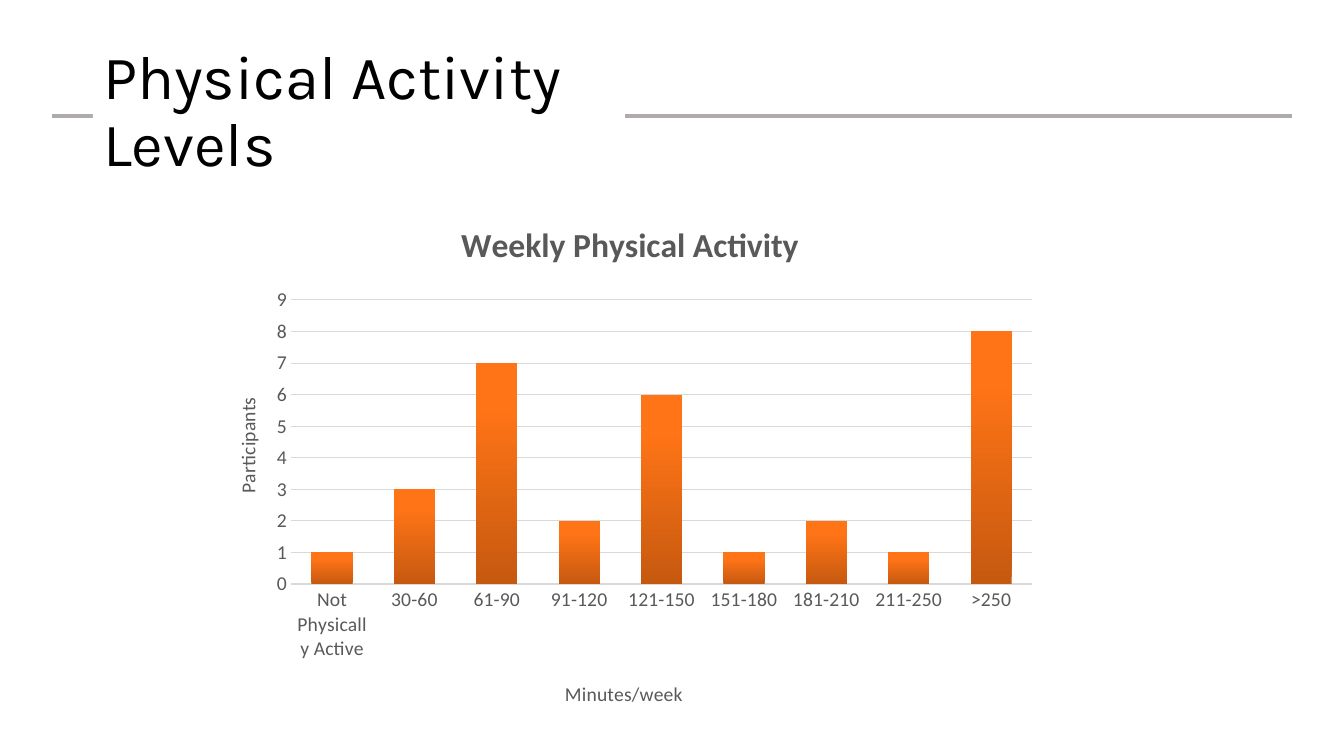
import copy
from dataclasses import dataclass

import pptx
import pptx.chart.data
import pptx.dml.color
import pptx.enum.chart
import pptx.enum.shapes
import pptx.enum.text
import pptx.oxml
import pptx.oxml.ns
import pptx.util
from lxml import etree

HEAD = "Physical Activity Levels"
NAMES = ("Weekly Physical Activity", "Minutes/week", "Participants")
COUNTS = {
    "Not Physically Active": 1, "30-60": 3, "61-90": 7, "91-120": 2,
    "121-150": 6, "151-180": 1, "181-210": 2, "211-250": 1, ">250": 8,
}

# Boxes in px: left, top, width, height
SIZE = (1344, 756)
HEAD_BOX = (93, 40, 532, 146)
RULE = (52, 116, 1292, 116)
CHART_BOX = (180, 186, 887, 606)

# Parts of the chart area
PLOT = {"x": 0.125, "y": 0.188, "w": 0.836, "h": 0.469}
SPOTS = ({"x": 0.31, "y": 0.05}, {"x": 0.43, "y": 0.81}, {"x": 0.057, "y": 0.343})


@dataclass(frozen=True)
class Theme:
    paper: str = "FFFFFF"
    ink: str = "000000"
    grey: str = "595959"
    grid: str = "D9D9D9"
    rule: str = "AFABAB"
    stops: tuple = ((0, "C65910"), (0.8, "FF7416"), (1, "FF7517"))
    head_font: str = "Karla"
    font: str = "Calibri"
    head: int = 44
    title: int = 24
    text: int = 14


THEME = Theme()
qn = pptx.oxml.ns.qn


def emu(*px):
    return [round(n * 914400 / 100.8) for n in px]


def rgb(code):
    return pptx.dml.color.RGBColor.from_string(code)


def style(font, name, size, color, bold=False):
    font.name, font.size, font.bold = name, pptx.util.Pt(size), bold
    font.color.rgb = rgb(color)


def stroke(line, color, width):
    line.color.rgb = rgb(color)
    line.width = pptx.util.Pt(width)


def place(parent, spot, index):
    """Give a chart part a fixed layout, as shares of the chart area."""
    for old in parent.findall(qn("c:layout")):
        parent.remove(old)
    layout = pptx.oxml.parse_xml(f"<c:layout {pptx.oxml.ns.nsdecls('c')}/>")
    manual = etree.SubElement(layout, qn("c:manualLayout"))
    if "w" in spot:
        etree.SubElement(manual, qn("c:layoutTarget")).set("val", "inner")
    for key in ("x", "y"):
        etree.SubElement(manual, qn(f"c:{key}Mode")).set("val", "edge")
    for key, share in spot.items():
        etree.SubElement(manual, qn(f"c:{key}")).set("val", str(share))
    parent.insert(index, layout)


def add_head(slide):
    title = slide.shapes.title
    title.left, title.top, title.width, title.height = emu(*HEAD_BOX)
    title.fill.solid()
    title.fill.fore_color.rgb = rgb(THEME.paper)
    frame = title.text_frame
    frame.text = HEAD
    frame.word_wrap = True
    frame.auto_size = pptx.enum.text.MSO_AUTO_SIZE.NONE
    frame.vertical_anchor = pptx.enum.text.MSO_ANCHOR.MIDDLE
    para = frame.paragraphs[0]
    para.alignment = pptx.enum.text.PP_ALIGN.LEFT
    para.line_spacing = 0.9
    style(para.runs[0].font, THEME.head_font, THEME.head, THEME.ink)

    rule = slide.shapes.add_connector(
        pptx.enum.shapes.MSO_CONNECTOR.STRAIGHT, *emu(*RULE))
    stroke(rule.line, THEME.rule, 3)
    etree.SubElement(rule.element.spPr, qn("a:effectLst"))
    title.element.addprevious(rule.element)  # the title box hides part of the rule


def fill_bars(chart):
    plot = chart.plots[0]
    plot.gap_width, plot.overlap, plot.vary_by_categories = 100, -24, False
    bars = plot.series[0].format
    bars.line.fill.background()
    bars.fill.gradient()
    bars.fill.gradient_angle = 90
    last = chart.element.xpath(".//c:ser//a:gs")[-1]
    last.addnext(copy.deepcopy(last))
    for stop, (share, color) in zip(bars.fill.gradient_stops, THEME.stops):
        stop.position = share
        stop.color.rgb = rgb(color)


def add_chart(slide):
    kinds = pptx.enum.chart
    data = pptx.chart.data.CategoryChartData(number_format="###0")
    data.categories = list(COUNTS)
    data.add_series("Series 1", COUNTS.values())
    chart = slide.shapes.add_chart(
        kinds.XL_CHART_TYPE.COLUMN_CLUSTERED, *emu(*CHART_BOX), data).chart
    style(chart.font, THEME.font, THEME.text, THEME.grey)
    chart.has_legend = False
    fill_bars(chart)

    cat, val = chart.category_axis, chart.value_axis
    for axis in (cat, val):
        axis.major_tick_mark = axis.minor_tick_mark = kinds.XL_TICK_MARK.NONE
        style(axis.tick_labels.font, THEME.font, THEME.text, THEME.grey)
    stroke(cat.format.line, THEME.grid, 1)
    val.format.line.fill.background()
    val.minimum_scale, val.maximum_scale, val.major_unit = 0, 9, 1
    val.tick_labels.number_format = "###0"
    val.tick_labels.number_format_is_linked = False
    stroke(val.major_gridlines.format.line, THEME.grid, 0.75)

    titles = (chart.chart_title, cat.axis_title, val.axis_title)
    for title, name, spot in zip(titles, NAMES, SPOTS):
        main = title is titles[0]
        title.text_frame.text = name
        run = title.text_frame.paragraphs[0].runs[0]
        style(run.font, THEME.font, THEME.title if main else THEME.text,
              THEME.grey, main)
        place(title.element, spot, 1)
    titles[-1].element.find(".//" + qn("a:bodyPr")).set("rot", "-5400000")
    place(chart.element.find(".//" + qn("c:plotArea")), PLOT, 0)


def main():
    deck = pptx.Presentation()
    deck.slide_width, deck.slide_height = emu(*SIZE)
    slide = deck.slides.add_slide(deck.slide_layouts[5])
    add_head(slide)
    add_chart(slide)
    deck.save("out.pptx")


if __name__ == "__main__":
    main()
